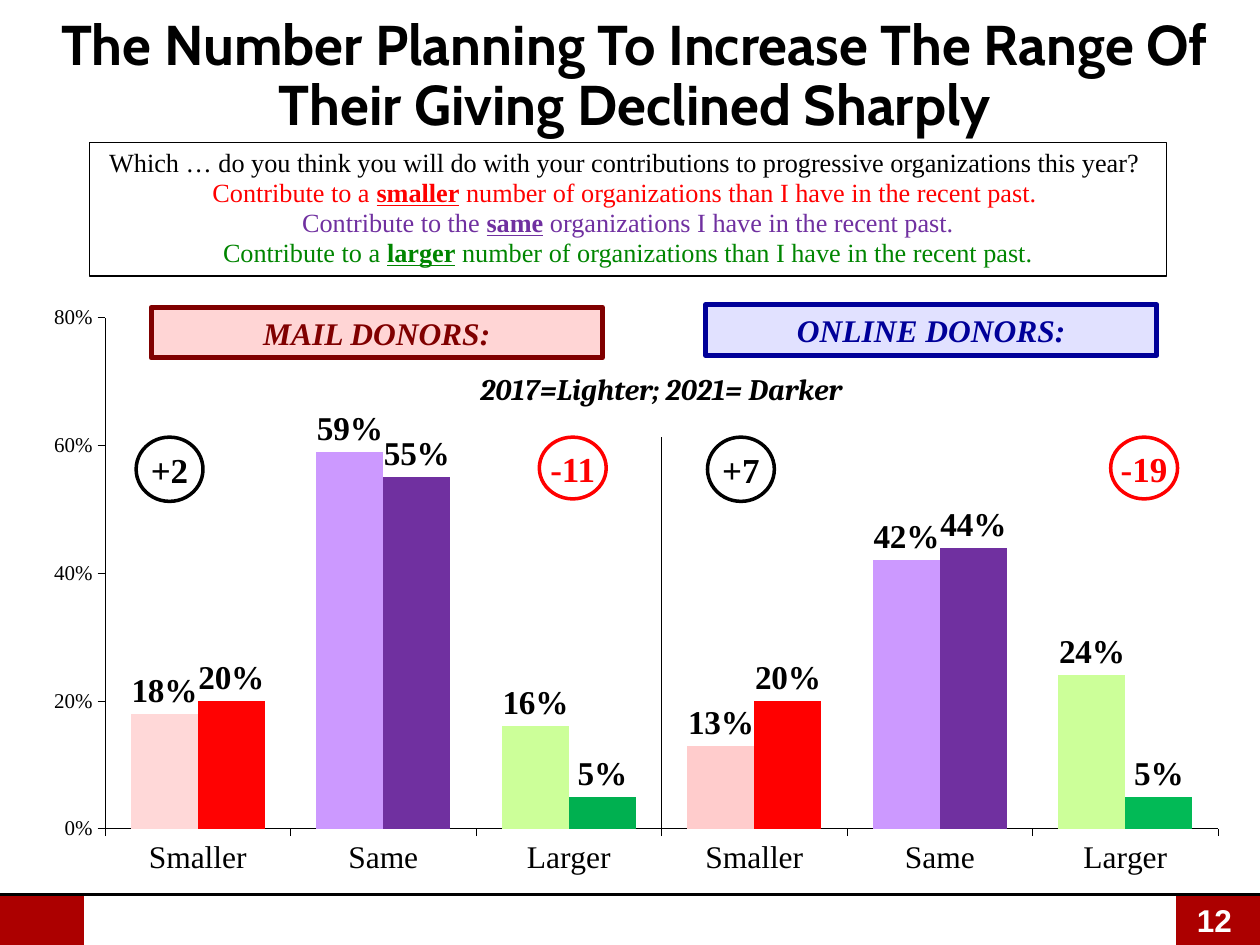
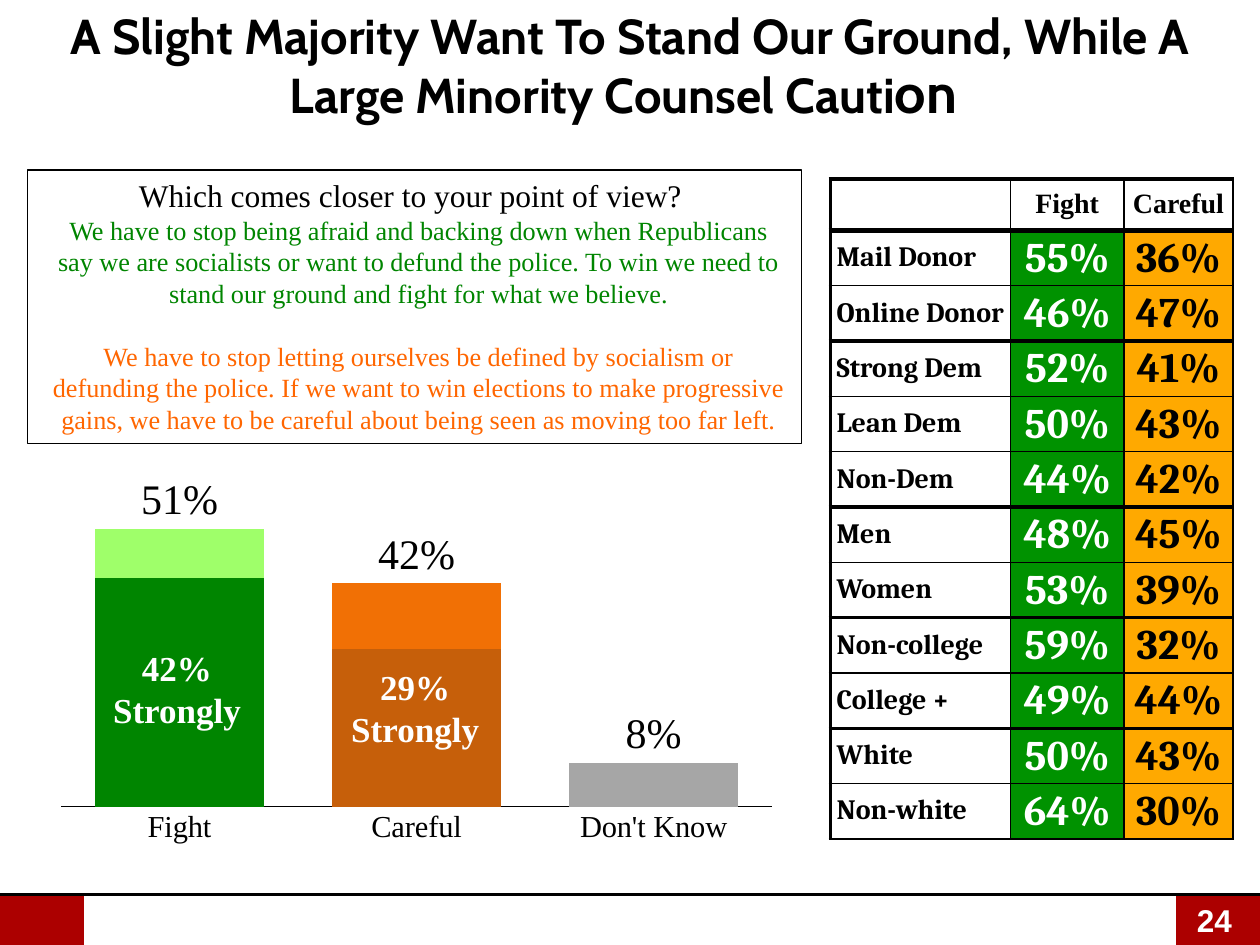
"""Build two donor survey slides with charts, a question box and a results table."""
from dataclasses import dataclass

from lxml.etree import SubElement
from pptx import Presentation
from pptx.chart.data import CategoryChartData
from pptx.dml.color import RGBColor
from pptx.enum.chart import XL_CHART_TYPE as Chart, XL_LABEL_POSITION as Place, XL_TICK_MARK as Tick
from pptx.enum.shapes import MSO_CONNECTOR as Connector, MSO_SHAPE as Shape
from pptx.enum.text import MSO_ANCHOR as Anchor, PP_ALIGN as Align
from pptx.oxml import parse_xml
from pptx.oxml.ns import nsdecls, qn
from pptx.util import Pt


@dataclass(frozen=True)
class Theme:
    black: str = "000000"
    white: str = "FFFFFF"
    band: str = "AC0000"
    red: str = "FF0000"
    purple: str = "7030A0"
    green: str = "008500"
    orange: str = "FF6600"
    fight: str = "009200"
    careful: str = "FFA900"
    sans: str = "Arial"
    title_face: str = "Cabin"
    serif: str = "Times New Roman"
    accent: str = "Cambria"
    axis: float = 12
    body: float = 15
    row: float = 16
    key: float = 17
    head: float = 18
    label: float = 19
    change: float = 20
    figure: float = 24
    title_small: float = 28
    title: float = 32


THEME = Theme()
STRESS = {"bold": True, "underline": True}

RANGE_TITLE = [[("The Number Planning To Increase The Range Of Their Giving Declined Sharply", {})]]
RANGE_QUESTION = [
    [("Which … do you think you will do with your contributions to progressive organizations this year? ", {})]
] + [
    [(start, {"color": color}), (word, {"color": color, **STRESS}), (end, {"color": color})]
    for start, word, end, color in [
        ("Contribute to a ", "smaller", " number of organizations than I have in the recent past. ", THEME.red),
        ("Contribute to the ", "same", " organizations I have in the recent past.", THEME.purple),
        ("Contribute to a ", "larger", " number of organizations than I have in the recent past.", THEME.green),
    ]
]
RANGE_KEY = "2017=Lighter; 2021= Darker"
RANGE_CATEGORIES = ["Smaller", "Same", "Larger"] * 2
RANGE_SERIES = [
    ("Series 1", [0.18, 0.59, 0.16, 0.13, 0.42, 0.24], "A5A5E9",
     ["FFD8D8", "CC99FF", "CCFF99", "FFCCCC", "CC99FF", "CCFF99"]),
    ("Series 2", [0.2, 0.55, 0.05, 0.2, 0.44, 0.05], "000099",
     ["FF0202", THEME.purple, "00B050", THEME.red, THEME.purple, "02BA56"]),
]
DONOR_PANELS = [
    {"name": "MAIL DONORS:", "at": (86.4, 175.7), "fill": "FFD5D5", "ink": "800000", "changes": ("+2", "-11")},
    {"name": "ONLINE DONORS:", "at": (403.2, 174.2), "fill": "E1E1FF", "ink": "000099", "changes": ("+7", "-19")},
]

GROUND_TITLE = [[
    ("A Slight Majority Want To Stand Our Ground, While A Large Minority Counsel Cauti", {}),
    ("on ", {"size": Pt(THEME.title)}),
]]
GROUND_QUESTION = "Which comes closer to your point of view? "
FIGHT_VIEW = (
    "We have to stop being afraid and backing down when Republicans say we are socialists or want to "
    "defund the police. To win we need to stand our ground and fight for what we believe."
)
CAREFUL_VIEW = (
    "We have to stop letting ourselves be defined by socialism or defunding the police. If we want to win "
    "elections to make progressive gains, we have to be careful about being seen as moving too far left."
)
GROUND_CATEGORIES = ["Fight", "Careful", "Don't Know"]
GROUND_SERIES = [
    ("Series 1", [0.42, 0.29, 0.08], "00CC99", [THEME.green, "C65F0A", "A6A6A6"]),
    ("Series 2", [0.09, 0.12, None], "3333CC", ["9FFF6A", "F17005"]),
    ("Series 3", [0.51, 0.42, 0.08], THEME.white, []),
]
STRONGLY = [("42%", (54.7, 365.8)), ("29%", (190.8, 376.6))]
GROUPS = [
    ("", "Fight", "Careful"),
    ("Mail Donor", "55%", "36%"),
    ("Online Donor", "46%", "47%"),
    ("Strong Dem", "52%", "41%"),
    ("Lean Dem", "50%", "43%"),
    ("Non-Dem", "44%", "42%"),
    ("Men", "48%", "45%"),
    ("Women", "53%", "39%"),
    ("Non-college", "59%", "32%"),
    ("College +", "49%", "44%"),
    ("White", "50%", "43%"),
    ("Non-white", "64%", "30%"),
]
RULE_BELOW = {0: 3, 2: 2.25, 5: 2.25, 7: 2.25, 9: 2.25}


def set_all(target, formats):
    for name, value in formats.items():
        setattr(target, name, value)


def style(font, color=THEME.black, **formats):
    set_all(font, formats)
    font.color.rgb = RGBColor.from_string(color)


def face(size, name=THEME.serif, **formats):
    return {"name": name, "size": Pt(size), **formats}


def paint(fill, color):
    fill.solid()
    fill.fore_color.rgb = RGBColor.from_string(color)


def stroke(line, color, width):
    paint(line.fill, color)
    line.width = Pt(width)


def write(frame, paras, font, **layout):
    for index, spans in enumerate(paras):
        para = frame.paragraphs[0] if index == 0 else frame.add_paragraph()
        set_all(para, {"alignment": Align.CENTER, **layout})
        for text, changes in spans:
            span = para.add_run()
            span.text = text
            style(span.font, **{**font, **changes})
    return frame


def add_box(page, at, kind=None, fill=None, line=None, anchor=Anchor.TOP, wrap=True):
    spot = [Pt(length) for length in at]
    if kind is None:
        box = page.shapes.add_textbox(*spot)
    else:
        box = page.shapes.add_shape(kind, *spot)
        box.shadow.inherit = False
        if fill:
            paint(box.fill, fill)
        else:
            box.fill.background()
        if line:
            stroke(box.line, *line)
        else:
            box.line.fill.background()
    set_all(box.text_frame, {"word_wrap": wrap, "vertical_anchor": anchor})
    return box


def add_line(page, start, end, width):
    line = page.shapes.add_connector(Connector.STRAIGHT, *[Pt(length) for length in start + end])
    stroke(line.line, THEME.black, width)
    SubElement(line._element.spPr, qn("a:effectLst"))


def add_page(deck, number):
    page = deck.slides.add_slide(deck.slide_layouts[6])
    for at in [(0, 510.5, 48, 30), (672, 511.9, 48, 29.5)]:
        add_box(page, at, Shape.RECTANGLE, THEME.band)
    add_line(page, (0, 511.2), (720, 511.2), 2)
    box = add_box(page, (676.8, 511.2, 59.8, 28.8))
    number_font = face(THEME.head, THEME.sans, bold=True, color=THEME.white)
    write(box.text_frame, [[(str(number), {})]], number_font, alignment=Align.LEFT)
    return page


def add_title(page, paras, at, size):
    box = add_box(page, (*at, 720, 51.1), anchor=Anchor.MIDDLE)
    write(box.text_frame, paras, face(size, THEME.title_face, bold=True), line_spacing=0.9)


def add_bars(page, kind, at, categories, series_list, plot_area, gap, top):
    data = CategoryChartData(number_format="0%")
    data.categories = categories
    for name, values, _, _ in series_list:
        data.add_series(name, values)
    chart = page.shapes.add_chart(kind, *[Pt(length) for length in at], data).chart
    set_all(chart, {"has_legend": False, "has_title": False})
    style(chart.font, **face(THEME.key, THEME.title_face, bold=True))
    plot = chart.plots[0]
    set_all(plot, {"gap_width": gap, "vary_by_categories": False})
    for series, (_, _, color, point_colors) in zip(plot.series, series_list):
        paint(series.format.fill, color)
        for index, point_color in enumerate(point_colors):
            paint(series.points[index].format.fill, point_color)
    set_all(chart.value_axis, {"minimum_scale": 0, "maximum_scale": top, "major_unit": 0.2,
                               "has_major_gridlines": False})
    area = chart._chartSpace.chart.plotArea
    for old in area.findall(qn("c:layout")):
        area.remove(old)
    sizes = "".join(f'<c:{key} val="{value}"/>' for key, value in zip("xywh", plot_area))
    area.insert(0, parse_xml(
        f'<c:layout {nsdecls("c")}><c:manualLayout><c:layoutTarget val="inner"/>'
        f'<c:xMode val="edge"/><c:yMode val="edge"/>{sizes}</c:manualLayout></c:layout>'))
    return chart


def dress_axis(axis, size, tick, width):
    set_all(axis, {"major_tick_mark": tick, "minor_tick_mark": Tick.NONE})
    style(axis.tick_labels.font, **face(size, bold=False))
    stroke(axis.format.line, THEME.black, width)


def label_values(series, place, font):
    labels = series.data_labels
    set_all(labels, {"show_value": True, "position": place, "number_format": "0%",
                     "number_format_is_linked": False})
    style(labels.font, **font)


def set_borders(cell, widths):
    props = cell._tc.get_or_add_tcPr()
    for side, width in zip("LRTB", widths):
        props.append(parse_xml(
            f'<a:ln{side} {nsdecls("a")} w="{Pt(width)}"><a:solidFill>'
            f'<a:srgbClr val="{THEME.black}"/></a:solidFill></a:ln{side}>'))


def add_groups_table(page, left, top, widths, header_height, row_height):
    height = header_height + row_height * (len(GROUPS) - 1)
    table = page.shapes.add_table(len(GROUPS), len(widths), Pt(left), Pt(top),
                                  Pt(sum(widths)), Pt(height)).table
    set_all(table, {"first_row": False, "horz_banding": False})
    for column, width in zip(table.columns, widths):
        column.width = Pt(width)
    inks = [THEME.black, THEME.white, THEME.black]
    fills = [THEME.white, THEME.fight, THEME.careful]
    for row, texts in enumerate(GROUPS):
        table.rows[row].height = Pt(row_height if row else header_height)
        for col, text in enumerate(texts):
            cell = table.cell(row, col)
            above = RULE_BELOW.get(row - 1, 1) if row else 2.25
            set_borders(cell, (1 if col else 2.25, 1, above, RULE_BELOW.get(row, 1)))
            paint(cell.fill, fills[col] if row else THEME.white)
            side = Pt(0.7 if row and col else 3.6)
            set_all(cell, {"margin_left": side, "margin_right": side, "margin_top": Pt(0.7),
                           "margin_bottom": 0, "vertical_anchor": Anchor.MIDDLE})
            font = face(THEME.figure if row and col else THEME.row,
                        THEME.accent if row else THEME.serif,
                        bold=True, color=inks[col] if row else THEME.black)
            spacing = 0.9 if not row else 1 if col else 0.85
            write(cell.text_frame, [[(text, {})]] if text else [], font,
                  alignment=Align.CENTER if col else Align.LEFT, line_spacing=spacing)


def build_range_page(deck):
    page = add_page(deck, 12)
    chart = add_bars(page, Chart.COLUMN_CLUSTERED, (22.3, 174.2, 673.9, 331.2), RANGE_CATEGORIES,
                     RANGE_SERIES, (0.056, 0.022, 0.944, 0.882), 77, 0.8)
    dress_axis(chart.category_axis, THEME.head, Tick.OUTSIDE, 0.25)
    dress_axis(chart.value_axis, THEME.axis, Tick.OUTSIDE, 0.25)
    set_all(chart.value_axis.tick_labels, {"number_format": "0%", "number_format_is_linked": False})
    for series in chart.plots[0].series:
        label_values(series, Place.OUTSIDE_END, face(THEME.label, bold=True))
    add_line(page, (378, 473.8), (378, 249.8), 0.75)
    add_title(page, RANGE_TITLE, (2.9, 18.7), THEME.title)
    box = add_box(page, (51.1, 81.4, 615.6, 76.3), Shape.RECTANGLE, THEME.white, (THEME.black, 0.75))
    write(box.text_frame, RANGE_QUESTION, face(THEME.body), line_spacing=0.95)
    for index, panel in enumerate(DONOR_PANELS):
        ink = panel["ink"]
        box = add_box(page, (*panel["at"], 257.8, 28.8), Shape.RECTANGLE, panel["fill"], (ink, 3))
        write(box.text_frame, [[(panel["name"], {})]], face(THEME.head, bold=True, italic=True, color=ink))
        circles = zip(panel["changes"], (77.8, 308.2), (36.7, 35.3), (THEME.black, THEME.red))
        for change, left, height, color in circles:
            circle = add_box(page, (left + index * 326.5, 249.8, 38.2, height), Shape.OVAL,
                             THEME.white, (color, 2), Anchor.MIDDLE, False)
            write(circle.text_frame, [[(change, {})]], face(THEME.change, bold=True, color=color))
    box = add_box(page, (239, 212.4, 277.9, 23.8))
    write(box.text_frame, [[(RANGE_KEY, {})]], face(THEME.key, THEME.accent, bold=True, italic=True),
          line_spacing=0.8)


def build_ground_page(deck):
    page = add_page(deck, 24)
    add_title(page, GROUND_TITLE, (0, 13.7), THEME.title_small)
    chart = add_bars(page, Chart.COLUMN_STACKED, (10.8, 149.8, 430.6, 355.7), GROUND_CATEGORIES,
                     GROUND_SERIES, (0.056, 0, 0.944, 0.875), 40, 1)
    chart.plots[0].overlap = 100
    dress_axis(chart.category_axis, 17.4, Tick.NONE, 0.4)
    chart.value_axis.visible = False
    label_values(chart.plots[0].series[2], Place.INSIDE_BASE, face(THEME.figure, bold=False))
    for share, at in STRONGLY:
        box = add_box(page, (*at, 92.9, 55.4))
        write(box.text_frame, [[(share, {})], [("Strongly", {})]],
              face(THEME.change, bold=True, color=THEME.white))
    box = add_box(page, (15.8, 97.2, 442.1, 156.2), Shape.RECTANGLE, line=(THEME.black, 0.75))
    views = [(FIGHT_VIEW, THEME.green), (CAREFUL_VIEW, THEME.orange)]
    paras = [[(GROUND_QUESTION, {"size": Pt(THEME.head)})]]
    paras += [[(view, {"color": color})] for view, color in views]
    frame = write(box.text_frame, paras, face(THEME.body))
    for para in frame.paragraphs[1:]:
        para._p.get_or_add_pPr().set("marL", str(Pt(5)))
    frame.paragraphs[2].space_before = Pt(18)
    add_groups_table(page, 474.5, 102.2, (103, 64.8, 62.3), 29.5, 31.62)


def main():
    deck = Presentation()
    set_all(deck, {"slide_width": Pt(720), "slide_height": Pt(540)})
    build_range_page(deck)
    build_ground_page(deck)
    deck.save("out.pptx")


if __name__ == "__main__":
    main()
